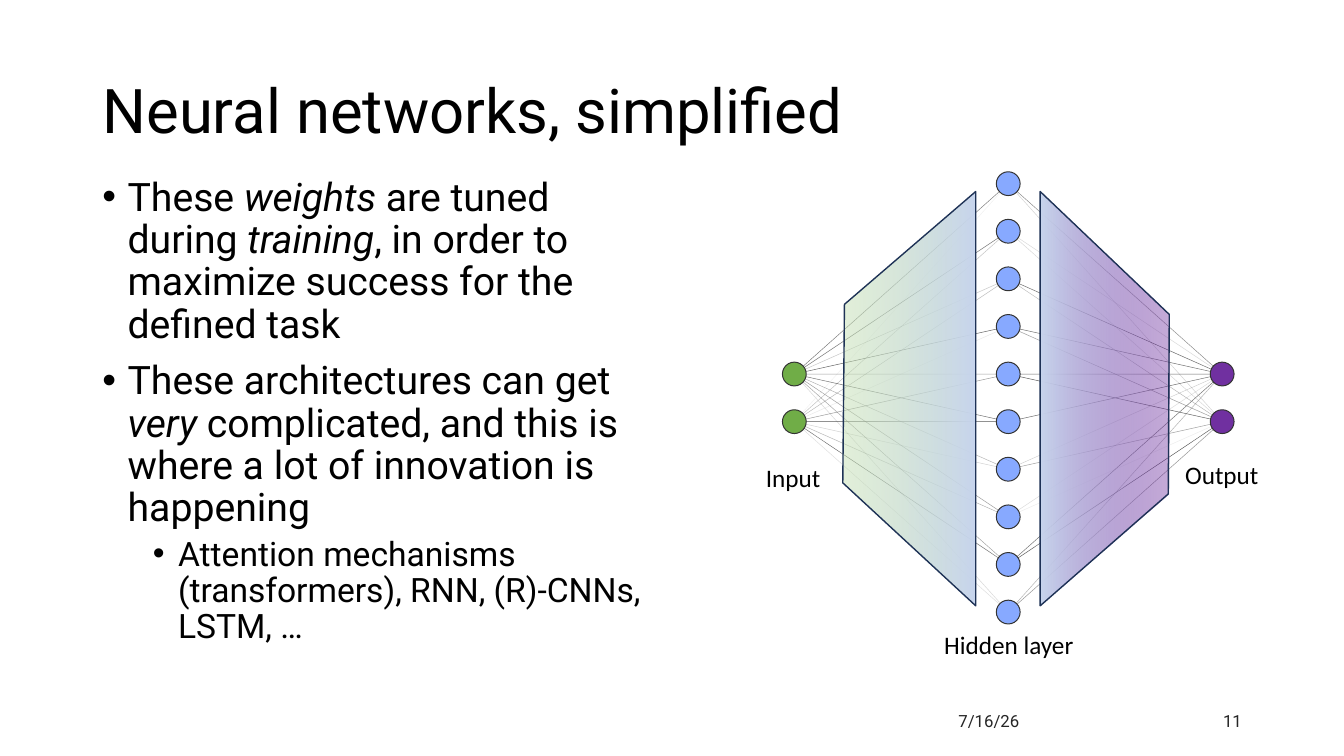
from lxml.etree import SubElement
from pptx import Presentation
from pptx.dml.color import RGBColor
from pptx.enum.shapes import MSO_CONNECTOR as Link, MSO_SHAPE as Kind
from pptx.enum.text import MSO_ANCHOR as Anchor, MSO_AUTO_SIZE as Fit, PP_ALIGN as Align
from pptx.oxml.ns import qn
from pptx.util import Pt

BLACK = RGBColor(0x00, 0x00, 0x00)
DARK = RGBColor(0x26, 0x26, 0x26)
EDGE = RGBColor(0x50, 0x50, 0x50)
RIM = RGBColor(0x33, 0x33, 0x33)
NAVY = RGBColor(0x1E, 0x32, 0x56)
GREEN = RGBColor(0x70, 0xAD, 0x47)
BLUE = RGBColor(0x87, 0xA9, 0xFF)
PURPLE = RGBColor(0x70, 0x30, 0xA0)
MINT = RGBColor(0xC5, 0xE0, 0xB4)
PALE = RGBColor(0xC7, 0xD5, 0xED)

# Node grid: column centres, first row centre, row step, diameter
IN_X, MID_X, OUT_X = 567.4, 720.2, 873
TOP, STEP, DOT = 131.2, 34, 17
ROWS = 10
ENDS = (4, 5)

# Edge opacity in percent, one value per hidden node; 0 means no edge
IN_EDGES = ((75, 81, 33, 89, 54, 81, 41, 55, 50, 21),
            (7, 35, 38, 12, 60, 96, 25, 42, 81, 18))
OUT_EDGES = ((64, 21, 87, 81, 86, 83, 25, 20, 80, 44),
             (26, 22, 40, 58, 94, 0, 54, 10, 92, 62))


def row_y(row):
    return TOP + row * STEP


class Deck:
    font = "Roboto"
    label_font = "Calibri"

    def __init__(self):
        self.prs = Presentation()
        self.prs.slide_width, self.prs.slide_height = Pt(960), Pt(540)
        self.slide = self.prs.slides.add_slide(self.prs.slide_layouts[1])
        self.shapes = self.slide.shapes

    def place(self, shape, box):
        shape.left, shape.top, shape.width, shape.height = map(Pt, box)

    def run(self, para, text, size, color=BLACK, font=None, italic=False):
        run = para.add_run()
        run.text = text
        run.font.name = font or self.font
        run.font.size = Pt(size)
        run.font.italic = italic
        run.font.color.rgb = color

    def fade(self, shape, pct):
        """Set the opacity of the first colour in the shape."""
        color = next(shape._element.spPr.iter(qn("a:srgbClr")))
        SubElement(color, qn("a:alpha")).set("val", str(pct * 1000))

    def title(self, text, box):
        shape = self.shapes.title
        self.place(shape, box)
        frame = shape.text_frame
        frame.auto_size = Fit.NONE
        frame.vertical_anchor = Anchor.MIDDLE
        para = frame.paragraphs[0]
        para.alignment = Align.LEFT
        para.line_spacing = 0.9
        self.run(para, text, 44)

    def bullets(self, items, box):
        """Each item is a level and its runs; odd runs are italic."""
        shape = self.slide.placeholders[1]
        self.place(shape, box)
        frame = shape.text_frame
        frame.auto_size = Fit.NONE
        for num, (level, parts) in enumerate(items):
            para = frame.add_paragraph() if num else frame.paragraphs[0]
            para.level = level
            props = para._p.get_or_add_pPr()
            props.set("marL", str(Pt(18 + 36 * level)))
            props.set("indent", str(-Pt(18)))
            SubElement(props, qn("a:buFont")).set("typeface", "Arial")
            SubElement(props, qn("a:buChar")).set("char", "•")
            para.line_spacing = 0.9
            para.space_before = Pt((5 if level else 10) if num else 0)
            for spot, text in enumerate(parts):
                self.run(para, text, 24 if level else 28, italic=spot % 2 == 1)

    def text(self, text, box, size, color=BLACK, font=None, wrap=True,
             align=Align.LEFT, anchor=Anchor.TOP):
        frame = self.shapes.add_textbox(*map(Pt, box)).text_frame
        frame.word_wrap = wrap
        frame.vertical_anchor = anchor
        para = frame.paragraphs[0]
        para.alignment = align
        self.run(para, text, size, color, font)

    def edge(self, start, end, pct):
        line = self.shapes.add_connector(
            Link.STRAIGHT, *map(Pt, (*start, *end)))
        line.line.color.rgb = EDGE
        line.line.width = Pt(0.35)
        SubElement(line._element.spPr, qn("a:effectLst"))
        self.fade(line, pct)

    def node(self, x, y, color):
        box = (x - DOT / 2, y - DOT / 2, DOT, DOT)
        dot = self.shapes.add_shape(Kind.OVAL, *map(Pt, box))
        dot.shadow.inherit = False
        dot.fill.solid()
        dot.fill.fore_color.rgb = color
        dot.line.color.rgb = RIM
        dot.line.width = Pt(0.71)

    def veil(self, points, color, pct, angle):
        """Draw a panel that runs from a see-through colour to pale blue."""
        first, *rest = [(Pt(x), Pt(y)) for x, y in points]
        form = self.shapes.build_freeform(*first, scale=1.0)
        form.add_line_segments(rest, close=True)
        panel = form.convert_to_shape()
        panel.shadow.inherit = False
        panel.fill.gradient()
        panel.fill.gradient_angle = angle
        for stop, tint in zip(panel.fill.gradient_stops, (color, PALE)):
            stop.color.rgb = tint
        panel.line.color.rgb = NAVY
        panel.line.width = Pt(1)
        self.fade(panel, pct)


def main():
    deck = Deck()

    # Title and list
    deck.title("Neural networks, simplified", (66, 28.8, 828, 104.4))
    deck.bullets([
        (0, ["These ", "weights", " are tuned during ", "training",
             ", in order to maximize success for the defined task"]),
        (0, ["These architectures can get ", "very",
             " complicated, and this is where a lot of innovation is happening"]),
        (1, ["Attention mechanisms (transformers), RNN, (R)-CNNs, LSTM, …"]),
    ], (66, 123.1, 408, 363.6))

    # Date and slide number
    deck.text("11", (786.2, 500.4, 108, 28.8), 12, DARK,
              align=Align.RIGHT, anchor=Anchor.MIDDLE)
    deck.text("7/16/26", (677.5, 500.4, 108, 28.8), 12, DARK,
              anchor=Anchor.MIDDLE)

    # Edges
    for x, table in ((IN_X, IN_EDGES), (OUT_X, OUT_EDGES)):
        for end, values in zip(ENDS, table):
            for row, pct in enumerate(values):
                if pct:
                    ends = sorted([(x, row_y(end)), (MID_X, row_y(row))])
                    deck.edge(*ends, pct)

    # Nodes
    for x, rows, color in ((IN_X, ENDS, GREEN), (MID_X, range(ROWS), BLUE),
                           (OUT_X, ENDS, PURPLE)):
        for row in rows:
            deck.node(x, row_y(row), color)

    # Layer labels
    for name, box in (("Hidden layer", (667.4, 445.7, 108, 28.8)),
                      ("Output", (839.5, 324.7, 67.7, 28.8)),
                      ("Input", (540, 326.9, 54, 28.8))):
        deck.text(name, box, 18, font=deck.label_font, wrap=False)

    # Panels over the edges
    deck.veil([(697, 432.7), (602, 344.9), (603.2, 217.4), (697, 136.8)],
              MINT, 48, 0)
    deck.veil([(743, 136.8), (835.2, 224.6), (834.5, 352.8), (743, 432.7)],
              PURPLE, 40, 180)

    deck.prs.save("out.pptx")


if __name__ == "__main__":
    main()
